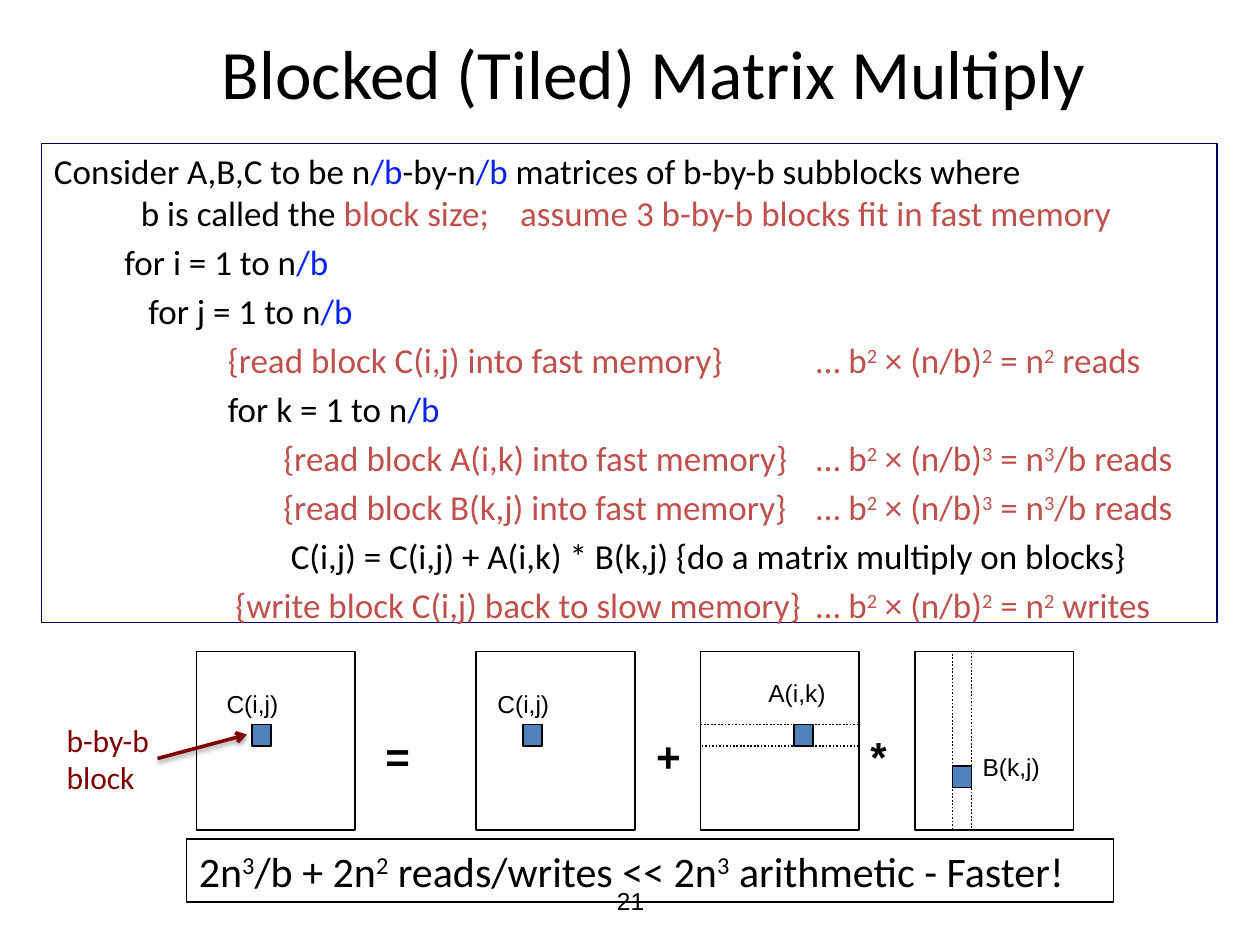
"""Build the slide on blocked matrix multiply."""
from dataclasses import dataclass

import lxml.etree
import pptx
import pptx.dml.color
import pptx.enum.dml
import pptx.enum.shapes
import pptx.enum.text
import pptx.oxml.ns
import pptx.util

Inches = pptx.util.Inches
Pt = pptx.util.Pt
Align = pptx.enum.text.PP_ALIGN
Anchor = pptx.enum.text.MSO_ANCHOR
qn = pptx.oxml.ns.qn

TONES = {"ink": "000000", "blue": "0824F2", "red": "C0504D",
         "navy": "000066", "fill": "4F81BD", "wine": "800000"}


@dataclass
class Run:
    """Text in one tone; parts between carets are raised."""
    text: str
    tone: str = "ink"


@dataclass
class Row:
    """A code line with its start and the column after a tab."""
    start: float
    runs: list[Run]
    col: float = 0
    gap: float = 4


@dataclass
class Grid:
    """A matrix with its tagged block, offset from the matrix corner."""
    left: float
    tag: str
    block: tuple[float, float]
    label: tuple[float, float]
    band: str = ""


TOP, WIDE, HIGH = 5.17, 1.26, 1.42
SIDE, TALL = 0.15, 0.17
OVER = Run("/b", "blue")

ROWS = [
    Row(0, [Run("Consider A,B,C to be n"), OVER, Run("-by-n"), OVER,
            Run(" matrices of b-by-b subblocks where")], gap=0),
    Row(0.69, [Run("b is called the "),
               Run("block size;\tassume 3 b-by-b blocks fit in fast memory", "red")],
        3.7, 0),
    Row(0.56, [Run("for i = 1 to n"), OVER]),
    Row(0.75, [Run("for j = 1 to n"), OVER]),
    Row(1.38, [Run("{read block C(i,j) into fast memory}\t"
                   "… b^2^ × (n/b)^2^ = n^2^ reads", "red")], 6.05),
    Row(1.38, [Run("for k = 1 to n"), OVER]),
    *[Row(1.82, [Run("{read block " + name + " into fast memory}\t"
                     "… b^2^ × (n/b)^3^ = n^3^/b reads", "red")], 6.05)
      for name in ("A(i,k)", "B(k,j)")],
    Row(1.88, [Run("C(i,j) = C(i,j) + A(i,k) * B(k,j) "
                   "{do a matrix multiply on blocks}")]),
    Row(1.44, [Run("{write block C(i,j) back to slow memory}\t"
                   "… b^2^ × (n/b)^2^ = n^2^ writes", "red")], 6.05),
]

GRIDS = [
    Grid(1.56, "C(i,j)", (0.44, 0.58), (0.14, 0.25)),
    Grid(3.78, "C(i,j)", (0.37, 0.58), (0.07, 0.25)),
    Grid(5.56, "A(i,k)", (0.74, 0.58), (0.44, 0.16), "row"),
    Grid(7.26, "B(k,j)", (0.3, 0.91), (0.44, 0.75), "column"),
]

SIGNS = [("=", 2.96), ("+", 5.11), ("*", 6.81)]


def hue(tone: str):
    """Give the colour of a tone."""
    return pptx.dml.color.RGBColor.from_string(TONES[tone])


def write(par, runs: list[Run], size: float, face: str = "Calibri",
          bold: bool = False) -> None:
    """Add runs to a paragraph."""
    for item in runs:
        for step, part in enumerate(item.text.split("^")):
            run = par.add_run()
            run.text = part
            run.font.size = Pt(size)
            run.font.name = face
            run.font.bold = bold
            run.font.color.rgb = hue(item.tone)
            if step % 2:
                run._r.get_or_add_rPr().set("baseline", "30000")


def put_text(slide, left: float, top: float, wide: float, high: float,
             runs: list[Run], size: float, face: str = "Arial",
             bold: bool = False, wrap: bool = False):
    """Add a text box with one paragraph and return its frame."""
    box = slide.shapes.add_textbox(Inches(left), Inches(top), Inches(wide), Inches(high))
    frame = box.text_frame
    frame.word_wrap = wrap
    write(frame.paragraphs[0], runs, size, face, bold)
    return frame


def put_rect(slide, left: float, top: float, wide: float, high: float,
             line: str = "ink", width: float = 1, fill: str = "", dots: bool = False):
    """Add an outlined rectangle."""
    rect = slide.shapes.add_shape(pptx.enum.shapes.MSO_SHAPE.RECTANGLE, Inches(left),
                                  Inches(top), Inches(wide), Inches(high))
    rect.shadow.inherit = False
    rect.line.color.rgb = hue(line)
    rect.line.width = Pt(width)
    if dots:
        rect.line.dash_style = pptx.enum.dml.MSO_LINE.ROUND_DOT
    if fill:
        rect.fill.solid()
        rect.fill.fore_color.rgb = hue(fill)
    else:
        rect.fill.background()
    return rect


def put_code(slide, rows: list[Row]) -> None:
    """Add the framed code listing."""
    frame = put_rect(slide, 0.33, 1.14, 9.33, 3.8, "navy", 0.75).text_frame
    frame.word_wrap = True
    frame.vertical_anchor = Anchor.TOP
    for step, row in enumerate(rows):
        par = frame.add_paragraph() if step else frame.paragraphs[0]
        par.alignment = Align.LEFT
        par.space_before = Pt(row.gap)
        edge = row.col or row.start
        props = par._p.get_or_add_pPr()
        props.set("marL", str(Inches(edge)))
        props.set("indent", str(Inches(row.start) - Inches(edge)))
        write(par, row.runs, 20)


def put_grid(slide, grid: Grid) -> None:
    """Draw a matrix, its band, its block and its tag."""
    put_rect(slide, grid.left, TOP, WIDE, HIGH)
    left, top = grid.left + grid.block[0], TOP + grid.block[1]
    if grid.band == "row":
        put_rect(slide, grid.left, top, WIDE, TALL, dots=True)
    elif grid.band == "column":
        put_rect(slide, left, TOP, SIDE, HIGH, dots=True)
    put_rect(slide, left, top, SIDE, TALL, fill="fill")
    put_text(slide, grid.left + grid.label[0], TOP + grid.label[1], 0.74, 0.34,
             [Run(grid.tag)], 14)


def put_arrow(slide) -> None:
    """Draw the shaded arrow to the first block."""
    arrow = slide.shapes.add_connector(pptx.enum.shapes.MSO_CONNECTOR.STRAIGHT, Inches(1.25),
                                       Inches(6.02), Inches(1.96), Inches(5.83))
    arrow.line.color.rgb = hue("wine")
    arrow.line.width = Pt(2)
    sub = lxml.etree.SubElement
    sub(arrow.line._get_or_add_ln(), qn("a:tailEnd"), type="arrow")
    glow = sub(sub(arrow._element.spPr, qn("a:effectLst")), qn("a:outerShdw"),
               blurRad=str(Pt(3.1)), dist=str(Pt(1.6)), dir="5400000", rotWithShape="0")
    shade = sub(glow, qn("a:srgbClr"), val=TONES["ink"])
    sub(shade, qn("a:alpha"), val="38000")


def main() -> None:
    """Build and save the slide."""
    deck = pptx.Presentation()
    deck.slide_width, deck.slide_height = Inches(10), Inches(7.5)
    slide = deck.slides.add_slide(deck.slide_layouts[5])
    title = slide.shapes.title
    title.left, title.top = Inches(0.88), Inches(0.34)
    title.width, title.height = Inches(8.62), Inches(0.46)
    title.text_frame.vertical_anchor = Anchor.MIDDLE
    title.text_frame.paragraphs[0].alignment = Align.CENTER
    write(title.text_frame.paragraphs[0], [Run("Blocked (Tiled) Matrix Multiply")], 39.6)

    page = put_text(slide, 3.42, 6.95, 3.17, 0.4, [Run("21")], 14, wrap=True)
    page.vertical_anchor = Anchor.MIDDLE
    page.paragraphs[0].alignment = Align.CENTER

    put_code(slide, ROWS)
    for grid in GRIDS:
        put_grid(slide, grid)
    for sign, left in SIGNS:
        put_text(slide, left, 5.75, 0.3, 0.5, [Run(sign)], 24, bold=True)

    note = put_text(slide, 0.43, 5.67, 0.88, 0.71, [Run("b-by-b", "wine")], 18, "Calibri")
    write(note.add_paragraph(), [Run("block", "wine")], 18)
    put_arrow(slide)

    sum_up = put_rect(slide, 1.48, 6.66, 7.36, 0.5, width=0.75).text_frame
    sum_up.word_wrap = True
    sum_up.paragraphs[0].alignment = Align.LEFT
    write(sum_up.paragraphs[0],
          [Run("2n^3^/b + 2n^2^ reads/writes << 2n^3^ arithmetic - Faster!")], 24)
    deck.save("out.pptx")


if __name__ == "__main__":
    main()
